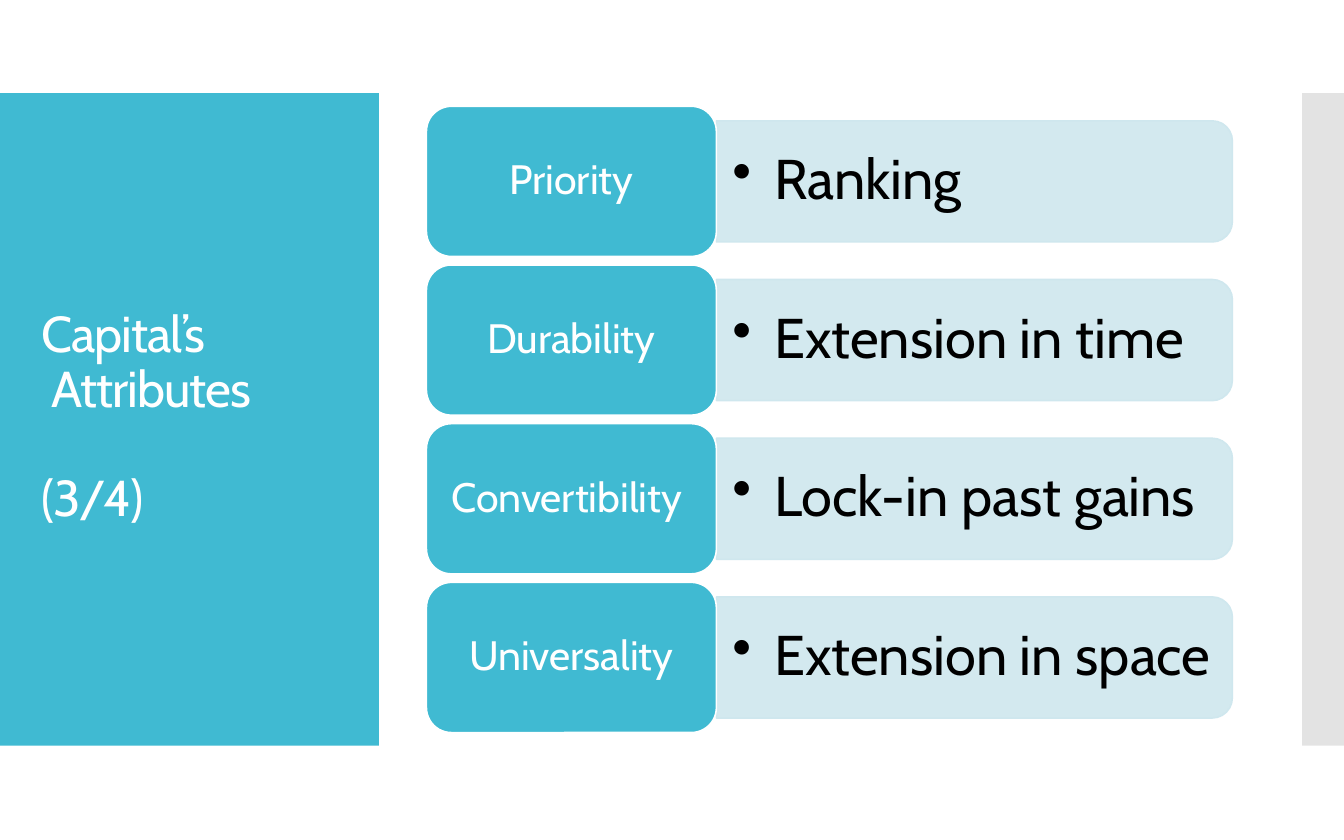
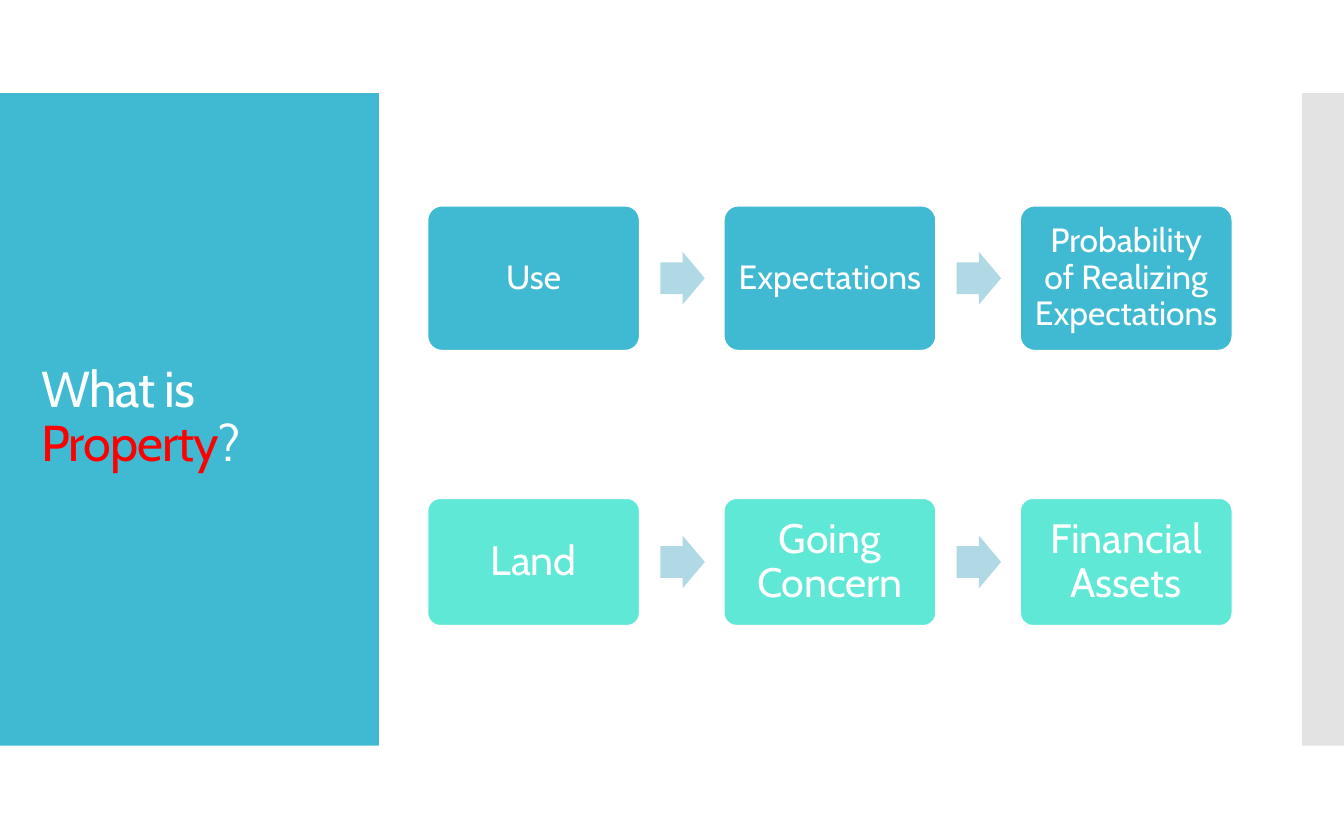
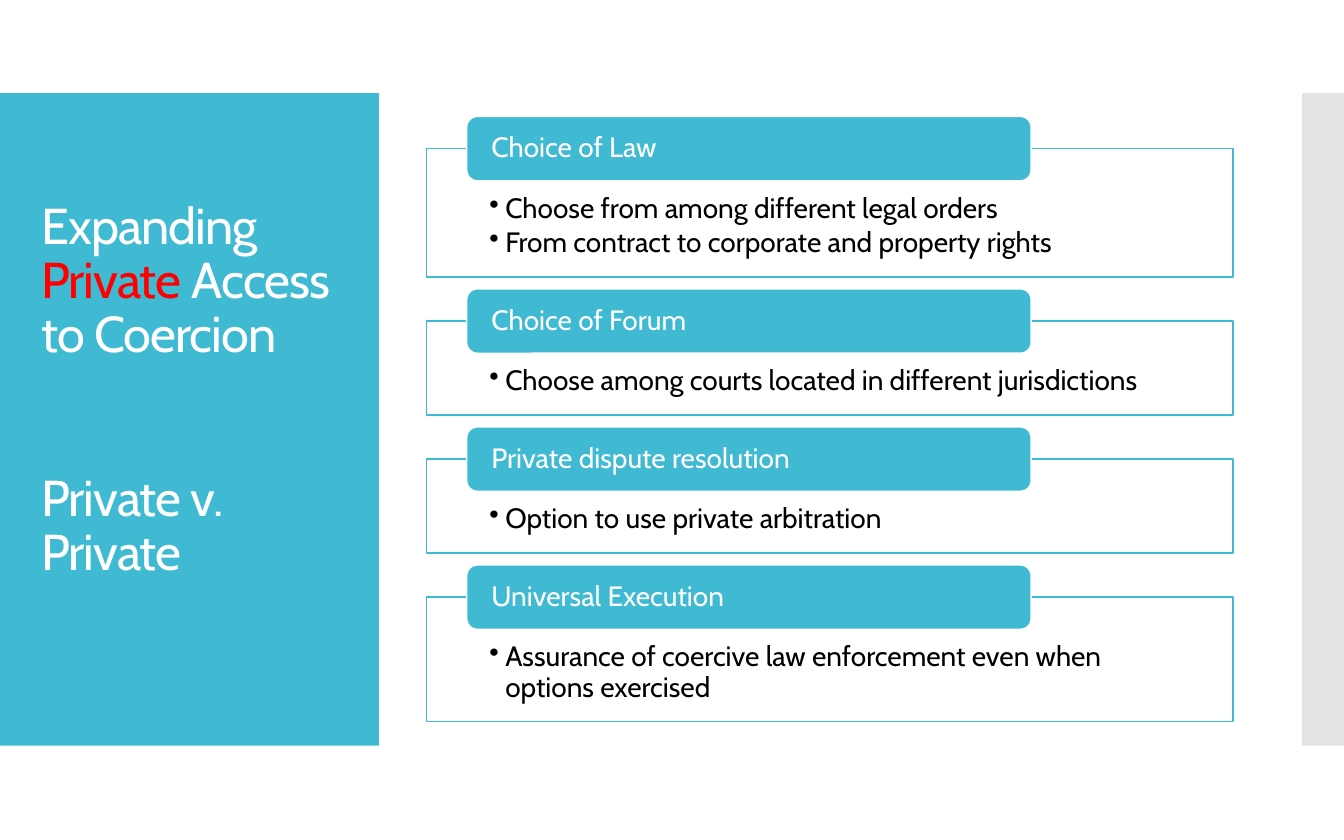
"""Build three slides on capital, property and private access to coercion."""
from dataclasses import dataclass

from lxml import etree
from pptx import Presentation
from pptx.dml.color import RGBColor
from pptx.enum.shapes import MSO_SHAPE
from pptx.enum.text import MSO_ANCHOR, PP_ALIGN
from pptx.oxml.ns import qn
from pptx.util import Cm, Pt

RECT = MSO_SHAPE.RECTANGLE
ROUND = MSO_SHAPE.ROUNDED_RECTANGLE
ROUND_TOP = MSO_SHAPE.ROUND_2_SAME_RECTANGLE
ARROW = MSO_SHAPE.RIGHT_ARROW
TOP, MIDDLE = MSO_ANCHOR.TOP, MSO_ANCHOR.MIDDLE
LEFT, CENTER = PP_ALIGN.LEFT, PP_ALIGN.CENTER

FONT = "Cabin"
COLORS = {
    "accent": "40BAD2",
    "mint": "5FE8D6",
    "pale": "CFE7EE",
    "arrow": "B0D9E5",
    "strip": "C8C8C8",
    "white": "FFFFFF",
    "black": "000000",
    "red": "FF0000",
}
LINE_WIDTH = 0.85
TITLE_LINE = 29.2


@dataclass(frozen=True)
class Box:
    """Position and size in centimetres."""
    x: float
    y: float
    w: float
    h: float

    @property
    def cy(self) -> float:
        """Return the vertical centre."""
        return self.y + self.h / 2


@dataclass(frozen=True)
class TextStyle:
    """Look of a text body: points for type, centimetres for insets."""
    size: float
    color: str = "white"
    align: PP_ALIGN = CENTER
    anchor: MSO_ANCHOR = MIDDLE
    insets: tuple[float, float, float, float] = (0, 0, 0, 0)
    bullet_indent: float = 0
    space_after: float = 0
    tracking: int = 0


@dataclass(frozen=True)
class Para:
    """A paragraph of (text, colour) runs with blank lines before it."""
    runs: tuple[tuple[str, str], ...]
    lines_before: int = 0


@dataclass(frozen=True)
class Attribute:
    """A labelled attribute of capital."""
    name: str
    meaning: str


@dataclass(frozen=True)
class Flow:
    """A row of steps joined by block arrows."""
    steps: tuple[str, ...]
    y: float
    h: float
    fill: str
    style: TextStyle


@dataclass(frozen=True)
class Section:
    """A headed frame with bullet points."""
    heading: str
    points: tuple[str, ...]
    h: float


LABEL_TEXT = TextStyle(22, insets=(0.23, 0.13, 0.23, 0.13))
MEANING_TEXT = TextStyle(30, "black", LEFT, insets=(0.3, 0.15, 0.3, 0.15),
                         bullet_indent=0.79)
STEP_TEXT = TextStyle(18, insets=(0.17,) * 4)
BIG_STEP_TEXT = TextStyle(22, insets=(0.23,) * 4)
HEADING_TEXT = TextStyle(15, align=LEFT, insets=(0.41, 0, 0.41, 0))
POINT_TEXT = TextStyle(15, "black", LEFT, TOP, (1.19, 0.86, 1.19, 0.3),
                       bullet_indent=0.3, space_after=2.25)

ATTRIBUTES = (
    Attribute("Priority", "Ranking"),
    Attribute("Durability", "Extension in time"),
    Attribute("Convertibility ", "Lock-in past gains"),
    Attribute("Universality", "Extension in space"),
)
FLOWS = (
    Flow(("Use", "Expectations", "Probability of Realizing Expectations"),
         3.89, 2.74, "accent", STEP_TEXT),
    Flow(("Land", "Going Concern", "Financial Assets"),
         9.42, 2.41, "mint", BIG_STEP_TEXT),
)
SECTIONS = (
    Section("Choice of Law",
            ("Choose from among different legal orders",
             "From contract to corporate and property rights"), 2.43),
    Section("Choice of Forum",
            ("Choose among courts located in different jurisdictions",), 1.78),
    Section("Private dispute resolution",
            ("Option to use private arbitration",), 1.78),
    Section("Universal Execution",
            ("Assurance of coercive law enforcement even when options exercised",),
            2.35),
)


def rgb(name: str) -> RGBColor:
    """Return a named colour."""
    return RGBColor.from_string(COLORS[name])


def write(sp, paras: list[Para], style: TextStyle) -> None:
    """Write paragraphs into a shape, run by run."""
    tf = sp.text_frame
    tf.word_wrap = True
    tf.vertical_anchor = style.anchor
    tf.margin_left, tf.margin_top, tf.margin_right, tf.margin_bottom = map(
        Cm, style.insets)
    for i, para in enumerate(paras):
        p = tf.paragraphs[0] if i == 0 else tf.add_paragraph()
        p.alignment = style.align
        p.line_spacing = 0.9
        p.space_before = Pt(TITLE_LINE * para.lines_before)
        p.space_after = Pt(style.space_after)
        if style.bullet_indent:
            pPr = p._p.get_or_add_pPr()
            indent = Cm(style.bullet_indent)
            pPr.set("marL", str(indent))
            pPr.set("indent", str(-indent))
            etree.SubElement(pPr, qn("a:buChar")).set("char", "•")
        for text, color in para.runs:
            r = p.add_run()
            r.text = text
            r.font.name = FONT
            r.font.size = Pt(style.size)
            r.font.color.rgb = rgb(color)
            if style.tracking:
                r._r.get_or_add_rPr().set("spc", str(style.tracking))


def plain(texts: tuple[str, ...], style: TextStyle) -> list[Para]:
    """Return one single-run paragraph per text."""
    return [Para(((text, style.color),)) for text in texts]


def add_shape(slide, kind: MSO_SHAPE, box: Box, fill: str,
              line: str | None = None, opacity: int = 100,
              adjustments: tuple[float, ...] = ()):
    """Add a flat preset shape."""
    sp = slide.shapes.add_shape(kind, Cm(box.x), Cm(box.y), Cm(box.w), Cm(box.h))
    sp.shadow.inherit = False
    sp.fill.solid()
    sp.fill.fore_color.rgb = rgb(fill)
    if opacity < 100:
        color = sp._element.spPr.find(qn("a:solidFill"))[0]
        etree.SubElement(color, qn("a:alpha")).set("val", str(opacity * 1000))
    if line:
        sp.line.color.rgb = rgb(line)
        sp.line.width = Pt(LINE_WIDTH)
    else:
        sp.line.fill.background()
    for i, value in enumerate(adjustments):
        sp.adjustments[i] = value
    return sp


def add_text(slide, box: Box, paras: list[Para], style: TextStyle) -> None:
    """Add a wrapping text box."""
    sp = slide.shapes.add_textbox(Cm(box.x), Cm(box.y), Cm(box.w), Cm(box.h))
    write(sp, paras, style)


def add_base(prs, title: list[Para], title_bottom: float = 0.13):
    """Add a blank slide with the title panel and the side strip."""
    slide = prs.slides.add_slide(prs.slide_layouts[6])
    add_shape(slide, RECT, Box(0, 1.76, 7.16, 12.34), "accent")
    add_shape(slide, RECT, Box(24.61, 1.76, 0.79, 12.34), "strip", opacity=50)
    style = TextStyle(27, align=LEFT, insets=(0.25, 0.13, 0.25, title_bottom),
                      tracking=-50)
    add_text(slide, Box(0.53, 2.59, 6.15, 10.64), title, style)
    return slide


def build_attributes(prs) -> None:
    """Build the slide of capital's attributes."""
    slide = add_base(prs, [
        Para((("Capital’s", "white"),)),
        Para(((" Attributes", "white"),)),
        Para((("(3/4)", "white"),), lines_before=1),
    ])
    bar_w, bar_h, text_h = 9.75, 2.29, 2.06
    for i, item in enumerate(ATTRIBUTES):
        label = Box(8.06, 2.01 + 3 * i, 5.48, 2.84)
        bar_x = label.x + label.w
        upright = Box(bar_x + (bar_w - bar_h) / 2, label.cy - bar_w / 2,
                      bar_h, bar_w)
        bar = add_shape(slide, ROUND_TOP, upright, "pale", "pale", opacity=90)
        bar.rotation = 90
        add_text(slide, Box(bar_x, label.cy - text_h / 2, 9.65, text_h),
                 plain((item.meaning,), MEANING_TEXT), MEANING_TEXT)
        sp = add_shape(slide, ROUND, label, "accent", "white")
        write(sp, plain((item.name,), LABEL_TEXT), LABEL_TEXT)


def build_property(prs) -> None:
    """Build the slide of the two property flows."""
    slide = add_base(prs, [
        Para((("What is ", "white"), ("Property", "red"), ("?", "white"))),
    ])
    arrow_w, arrow_h = 0.84, 1.0
    for flow in FLOWS:
        for i, step in enumerate(flow.steps):
            box = Box(8.08 + 5.6 * i, flow.y, 4.01, flow.h)
            if i:
                arrow = Box(box.x - 1.2, box.cy - arrow_h / 2, arrow_w, arrow_h)
                add_shape(slide, ARROW, arrow, "arrow", adjustments=(0.6, 0.5))
            sp = add_shape(slide, ROUND, box, flow.fill, "white",
                           adjustments=(0.1,))
            write(sp, plain((step,), flow.style), flow.style)


def build_coercion(prs) -> None:
    """Build the slide of private access to coercion."""
    slide = add_base(prs, [
        Para((("Expanding ", "white"), ("Private", "red"),
              (" Access to Coercion", "white"))),
        Para((("Private v. Private", "white"),), lines_before=2),
    ], title_bottom=1.16)
    y, gap = 2.81, 0.83
    for section in SECTIONS:
        frame = add_shape(slide, RECT, Box(8.06, y, 15.24, section.h),
                          "white", "accent", opacity=90)
        write(frame, plain(section.points, POINT_TEXT), POINT_TEXT)
        heading = add_shape(slide, ROUND, Box(8.82, y - 0.61, 10.67, 1.22),
                            "accent", "white")
        write(heading, plain((section.heading,), HEADING_TEXT), HEADING_TEXT)
        y += section.h + gap


def main() -> None:
    """Build and save the presentation."""
    prs = Presentation()
    prs.slide_width, prs.slide_height = Cm(25.4), Cm(15.88)
    build_attributes(prs)
    build_property(prs)
    build_coercion(prs)
    prs.save("out.pptx")


if __name__ == "__main__":
    main()
